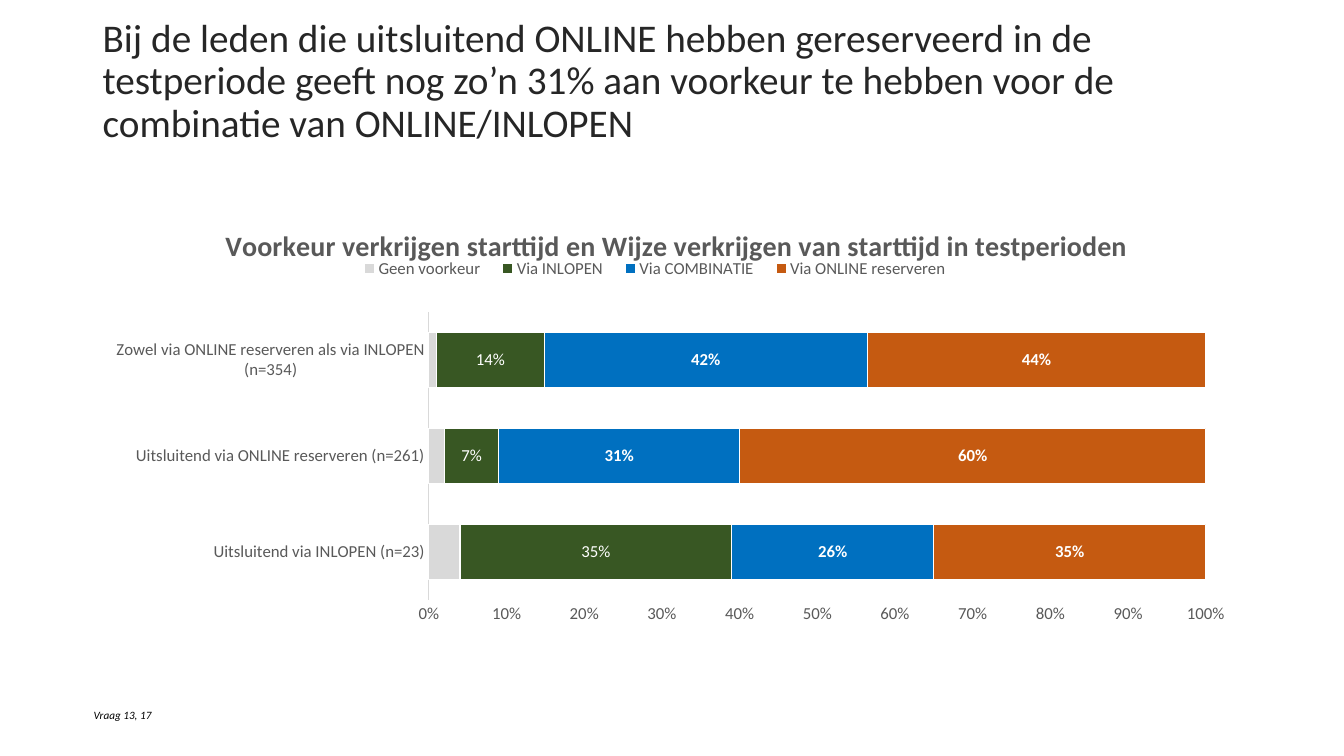
from dataclasses import dataclass

from lxml.etree import SubElement
from pptx import Presentation
from pptx.chart.data import CategoryChartData
from pptx.dml.color import RGBColor
from pptx.enum.chart import XL_CHART_TYPE, XL_LEGEND_POSITION, XL_TICK_MARK
from pptx.enum.text import MSO_ANCHOR
from pptx.oxml.ns import qn
from pptx.util import Inches, Pt

SLIDE_WIDTH, SLIDE_HEIGHT = Inches(13.33), Inches(7.5)


@dataclass(frozen=True)
class Theme:
    font: str = "Calibri"
    heading: str = "262626"
    muted: str = "595959"
    axis: str = "D9D9D9"
    black: str = "000000"
    white: str = "FFFFFF"
    heading_size: int = 28
    chart_title_size: int = 20
    chart_size: int = 12
    note_size: int = 8


THEME = Theme()

HEADING = (
    "Bij de leden die uitsluitend ONLINE hebben gereserveerd in de testperiode "
    "geeft nog zo’n 31% aan voorkeur te hebben voor de combinatie van ONLINE/INLOPEN"
)
CHART_TITLE = "Voorkeur verkrijgen starttijd en Wijze verkrijgen van starttijd in testperioden"
GROUPS = [
    "Uitsluitend via INLOPEN (n=23)",
    "Uitsluitend via ONLINE reserveren (n=261)",
    "Zowel via ONLINE reserveren als via INLOPEN (n=354)",
]
# name, values, colour, labels shown, labels bold
PREFERENCES = [
    ("Geen voorkeur", (0.04, 0.02, 0.01), "D9D9D9", False, False),
    ("Via INLOPEN", (0.35, 0.07, 0.14), "385723", True, False),
    ("Via COMBINATIE", (0.26, 0.31, 0.42), "0070C0", True, True),
    ("Via ONLINE reserveren", (0.35, 0.60, 0.44), "C55A11", True, True),
]


def place(left, top, width, height):
    """Turn percentages of the slide's size into lengths."""
    return (
        int(SLIDE_WIDTH * left / 100),
        int(SLIDE_HEIGHT * top / 100),
        int(SLIDE_WIDTH * width / 100),
        int(SLIDE_HEIGHT * height / 100),
    )


def style(font, size, colour, bold=False, italic=False):
    formats = {"name": THEME.font, "size": Pt(size), "bold": bold, "italic": italic}
    for attribute, value in formats.items():
        setattr(font, attribute, value)
    font.color.rgb = RGBColor.from_string(colour)


def add_text(slide, text, area, size, colour, wrap=True, italic=False, spacing=1.0):
    frame = slide.shapes.add_textbox(*place(*area)).text_frame
    frame.word_wrap = wrap
    frame.vertical_anchor = MSO_ANCHOR.MIDDLE if wrap else MSO_ANCHOR.TOP
    paragraph = frame.paragraphs[0]
    paragraph.line_spacing = spacing
    run = paragraph.add_run()
    run.text = text
    style(run.font, size, colour, italic=italic)


def set_layout(element, index, inner=False, **shares):
    """Fix a chart part at shares of the chart's size; index is its place among siblings."""
    for old in element.findall(qn("c:layout")):
        element.remove(old)
    layout = element.makeelement(qn("c:layout"), {})
    element.insert(index, layout)
    manual = SubElement(layout, qn("c:manualLayout"))
    if inner:
        SubElement(manual, qn("c:layoutTarget"), val="inner")
    for side in "xy":
        SubElement(manual, qn(f"c:{side}Mode"), val="edge")
    for side, share in shares.items():
        SubElement(manual, qn(f"c:{side}"), val=str(share))


def format_axes(chart):
    for axis in (chart.category_axis, chart.value_axis):
        axis.major_tick_mark = axis.minor_tick_mark = XL_TICK_MARK.NONE
        axis.has_major_gridlines = False
        style(axis.tick_labels.font, THEME.chart_size, THEME.muted)
    group_line = chart.category_axis.format.line
    group_line.color.rgb = RGBColor.from_string(THEME.axis)
    group_line.width = Pt(0.75)
    shares = chart.value_axis
    shares.format.line.fill.background()
    shares.minimum_scale, shares.maximum_scale, shares.major_unit = 0, 1, 0.1
    shares.tick_labels.number_format = "0%"
    shares.tick_labels.number_format_is_linked = False


def format_series(series, colour, labelled, bold):
    series.format.fill.solid()
    series.format.fill.fore_color.rgb = RGBColor.from_string(colour)
    series.format.line.color.rgb = RGBColor.from_string(THEME.white)
    series.format.line.width = Pt(0.75)
    if labelled:
        labels = series.data_labels
        labels.show_value = True
        labels.number_format = "0%"
        labels.number_format_is_linked = False
        style(labels.font, THEME.chart_size, THEME.white, bold=bold)


def add_preference_chart(slide, area):
    data = CategoryChartData(number_format="0%")
    data.categories = GROUPS
    for name, values, *_ in PREFERENCES:
        data.add_series(name, values)
    chart = slide.shapes.add_chart(
        XL_CHART_TYPE.BAR_STACKED_100, *place(*area), data
    ).chart
    style(chart.font, THEME.chart_size, THEME.muted)

    chart.has_title = True
    title = chart.chart_title
    title.include_in_layout = False
    run = title.text_frame.paragraphs[0].add_run()
    run.text = CHART_TITLE
    style(run.font, THEME.chart_title_size, THEME.muted, bold=True)

    chart.has_legend = True
    legend = chart.legend
    legend.position = XL_LEGEND_POSITION.TOP
    legend.include_in_layout = False
    style(legend.font, THEME.chart_size, THEME.muted)

    plot = chart.plots[0]
    plot.gap_width, plot.overlap, plot.vary_by_categories = 75, 100, False
    for series, (_, _, *look) in zip(plot.series, PREFERENCES):
        format_series(series, *look)
    format_axes(chart)

    plot_area = chart.element.find(".//" + qn("c:plotArea"))
    set_layout(plot_area, 0, inner=True, x=0.29, y=0.23, w=0.67, h=0.6)
    set_layout(title._element, 1, x=0.11, y=0.04)
    set_layout(legend._element, 1, x=0.22, y=0.11, w=0.53, h=0.06)


def main():
    presentation = Presentation()
    presentation.slide_width, presentation.slide_height = SLIDE_WIDTH, SLIDE_HEIGHT
    slide = presentation.slides.add_slide(presentation.slide_layouts[6])
    add_text(slide, HEADING, (6.9, 1.73, 86.27, 18.27),
             THEME.heading_size, THEME.heading, spacing=0.9)
    add_preference_chart(slide, (6.9, 26.67, 86.27, 63.47))
    add_text(slide, "Vraag 13, 17", (6.23, 93.07, 5.85, 3.2),
             THEME.note_size, THEME.black, wrap=False, italic=True)
    presentation.save("out.pptx")


if __name__ == "__main__":
    main()
